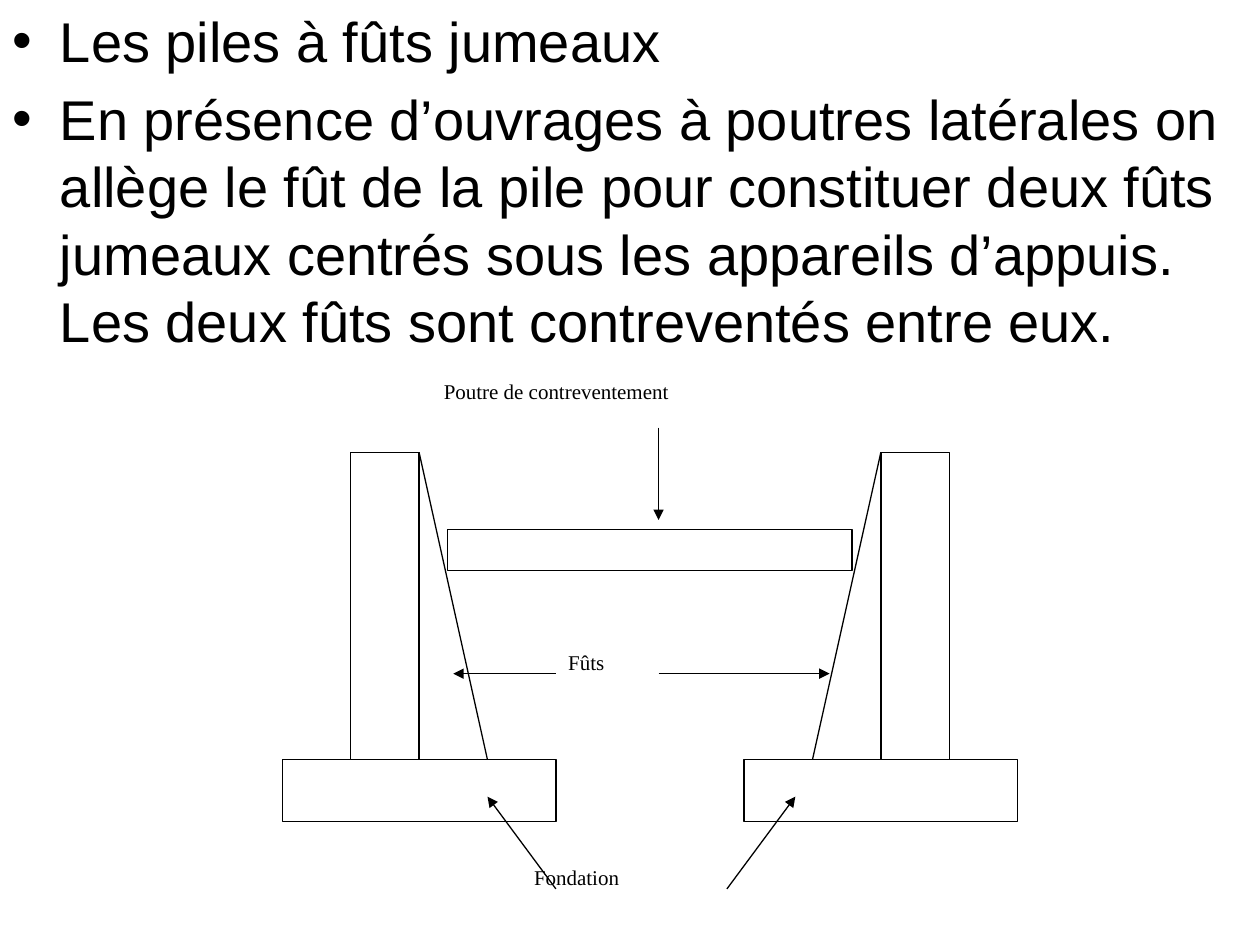
"""Build the slide on bridge piers with twin shafts."""
from lxml import etree
from pptx import Presentation
from pptx.dml.color import RGBColor
from pptx.enum.shapes import MSO_CONNECTOR as CONNECTOR, MSO_SHAPE as SHAPE
from pptx.enum.text import MSO_ANCHOR as ANCHOR, PP_ALIGN as ALIGN
from pptx.oxml.ns import qn
from pptx.util import Inches, Pt

COLUMN, ROW = 0.543, 0.244
LEFT, TOP = 2.24, 3.59


def paint(color_format, value):
    color_format.rgb = RGBColor.from_string(value)


def grid_point(column, row):
    return Inches(LEFT + column * COLUMN), Inches(TOP + row * ROW)


presentation = Presentation()
presentation.slide_width, presentation.slide_height = Inches(10), Inches(7.5)
slide = presentation.slides.add_slide(presentation.slide_layouts[1])
title, body = slide.placeholders
title.element.getparent().remove(title.element)

body.left, body.top = 0, 0
body.width, body.height = presentation.slide_width, presentation.slide_height
body.text_frame.text = "\n".join([
    "Les piles à fûts jumeaux",
    "En présence d’ouvrages à poutres latérales on allège le fût de la pile "
    "pour constituer deux fûts jumeaux centrés sous les appareils d’appuis. "
    "Les deux fûts sont contreventés entre eux.",
])
for paragraph in body.text_frame.paragraphs:
    paragraph.font.size, paragraph.font.name = Pt(32), "Arial"
    paint(paragraph.font.color, "000000")

boxes = [
    (6.75, 10, 4, 2, ""),
    (8.75, 0, 1, 10, ""),
    (0, 10, 4, 2, ""),
    (1, 0, 1, 10, ""),
    (2.41, 2.5, 5.92, 1.35, ""),
    (2.18, -2.6, 7, 2, "Poutre de contreventement"),
    (4, 6.2, 2.5, 2, "Fûts"),
    (3.5, 13.2, 3.2, 2, "Fondation"),
]
for column, row, columns, rows, label in boxes:
    box = slide.shapes.add_shape(
        SHAPE.RECTANGLE, *grid_point(column, row),
        Inches(columns * COLUMN), Inches(rows * ROW))
    box.shadow.inherit = False
    box.fill.solid()
    paint(box.fill.fore_color, "FFFFFF")
    paint(box.line.color, "FFFFFF" if label else "000000")
    box.line.width = Pt(0.75)
    if label:
        frame = box.text_frame
        frame.text, frame.vertical_anchor = label, ANCHOR.TOP
        paragraph = frame.paragraphs[0]
        paragraph.alignment = ALIGN.LEFT
        paragraph.font.size, paragraph.font.name = Pt(12), "Times New Roman"
        paint(paragraph.font.color, "000000")

lines = [
    (8.75, 0, 7.75, 10, False),
    (3, 10, 2, 0, False),
    (5.5, -0.8, 5.5, 2.2, True),
    (4, 7.2, 2.5, 7.2, True),
    (5.5, 7.2, 8, 7.2, True),
    (4, 14.2, 3, 11.2, True),
    (6.5, 14.2, 7.5, 11.2, True),
]
for start_column, start_row, end_column, end_row, has_arrow in lines:
    line = slide.shapes.add_connector(
        CONNECTOR.STRAIGHT, *grid_point(start_column, start_row),
        *grid_point(end_column, end_row))
    paint(line.line.color, "000000")
    line.line.width = Pt(0.75)
    if has_arrow:
        etree.SubElement(line.line._get_or_add_ln(), qn("a:tailEnd"), type="triangle")
    etree.SubElement(line.element.spPr, qn("a:effectLst"))

presentation.save("out.pptx")
